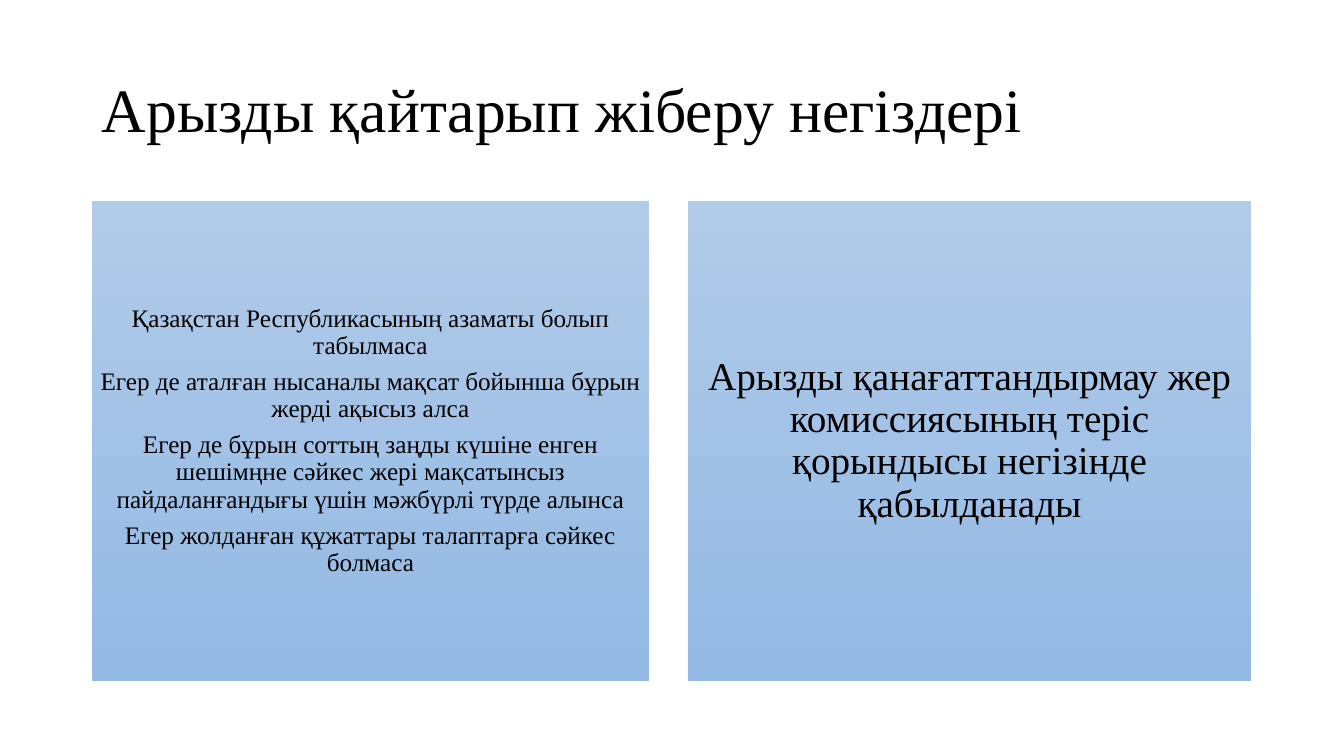
import pptx
import pptx.util
import pptx.dml.color
import pptx.enum.shapes
import pptx.enum.text

# Content: lengths in px
FONT = "Times New Roman"
COLORS = {"text": "000000", "panel_top": "B1CBE9", "panel_bottom": "93B9E4"}
SLIDE_SIZE = (1344, 756)
TITLE = {"text": "Арызды қайтарып жіберу негіздері", "box": (92, 40, 1159, 146), "size": 44}
PANEL_TOP, PANEL_HEIGHT = 201, 480
PANELS = [
    {
        "left": 92, "width": 557, "inset": 7, "size": 18,
        "lines": [
            "Қазақстан Республикасының азаматы болып табылмаса",
            "Егер де аталған нысаналы мақсат бойынша бұрын жерді ақысыз алса",
            "Егер де бұрын соттың заңды күшіне енген шешімңне сәйкес жері "
            "мақсатынсыз пайдаланғандығы үшін мәжбүрлі түрде алынса",
            "Егер жолданған құжаттары талаптарға сәйкес болмаса",
        ],
    },
    {
        "left": 688, "width": 563, "inset": 12, "size": 28,
        "lines": [
            "Арызды қанағаттандырмау жер комиссиясының теріс қорындысы "
            "негізінде қабылданады",
        ],
    },
]
LINE_SPACING = 0.9
SPACE_AFTER = 0.35  # share of the font size
EMU_PER_PX = 914400 / 100.8


def px(length):
    return pptx.util.Emu(round(length * EMU_PER_PX))


def color(name):
    return pptx.dml.color.RGBColor.from_string(COLORS[name])


def write(shape, lines, size, alignment, space_after=0):
    frame = shape.text_frame
    frame.word_wrap = True
    frame.vertical_anchor = pptx.enum.text.MSO_ANCHOR.MIDDLE
    frame.text = "\n".join(lines)
    for paragraph in frame.paragraphs:
        paragraph.alignment = alignment
        paragraph.line_spacing = LINE_SPACING
        paragraph.space_after = pptx.util.Pt(space_after)
        paragraph.font.name = FONT
        paragraph.font.size = pptx.util.Pt(size)
        paragraph.font.color.rgb = color("text")


def add_panel(slide, panel):
    box = (panel["left"], PANEL_TOP, panel["width"], PANEL_HEIGHT)
    shape = slide.shapes.add_shape(
        pptx.enum.shapes.MSO_SHAPE.RECTANGLE, *map(px, box))
    shape.shadow.inherit = False
    shape.line.fill.background()

    # Top-to-bottom gradient
    shape.fill.gradient()
    shape.fill.gradient_angle = 270
    for stop, name in zip(shape.fill.gradient_stops, ("panel_top", "panel_bottom")):
        stop.color.rgb = color(name)

    # Equal insets on all sides
    frame = shape.text_frame
    inset = px(panel["inset"])
    frame.margin_left = frame.margin_right = inset
    frame.margin_top = frame.margin_bottom = inset
    write(shape, panel["lines"], panel["size"],
          pptx.enum.text.PP_ALIGN.CENTER, panel["size"] * SPACE_AFTER)


def main():
    presentation = pptx.Presentation()
    presentation.slide_width, presentation.slide_height = map(px, SLIDE_SIZE)
    slide = presentation.slides.add_slide(presentation.slide_layouts[6])

    # Title
    title = slide.shapes.add_textbox(*map(px, TITLE["box"]))
    write(title, [TITLE["text"]], TITLE["size"], pptx.enum.text.PP_ALIGN.LEFT)

    # Two panels
    for panel in PANELS:
        add_panel(slide, panel)

    presentation.save("out.pptx")


if __name__ == "__main__":
    main()
